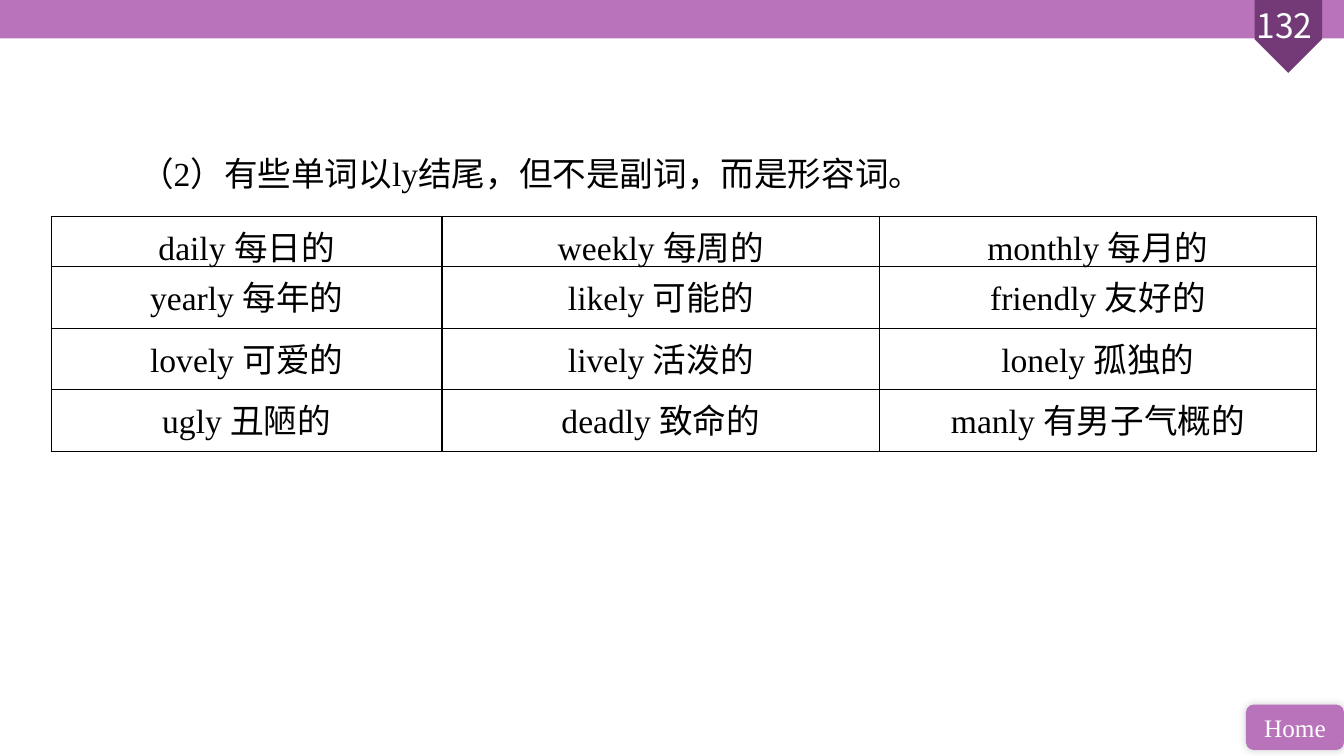
"""Build a slide listing adjectives that end in ly."""
from dataclasses import dataclass
from lxml import etree
from pptx import Presentation
from pptx.dml.color import RGBColor
from pptx.enum import shapes, text
from pptx.oxml import ns
from pptx.util import Pt

RULE = "（2）有些单词以ly结尾，但不是副词，而是形容词。"
WORDS = [
    ("daily 每日的", "weekly 每周的", "monthly 每月的"),
    ("yearly 每年的", "likely 可能的", "friendly 友好的"),
    ("lovely 可爱的", "lively 活泼的", "lonely 孤独的"),
    ("ugly 丑陋的", "deadly 致命的", "manly 有男子气概的"),
]
PAGE, HOME = "132 ", "Home"
COLS = (279.2, 312.5, 311.9)
ROWS = (35.7, 44, 44, 44)


@dataclass(frozen=True)
class Theme:
    """Colours, fonts and type sizes."""
    band: str = "B873BB"
    flag: str = "743A78"
    ink: str = "000000"
    light: str = "FFFFFF"
    latin: str = "Times New Roman"
    asian: str = "Noto Sans CJK SC"
    body: int = 24
    small: int = 18


T = Theme()
SHAPE = shapes.MSO_SHAPE
ALIGN = text.PP_ALIGN


def add(parent, tag, **attrs):
    """Append a DrawingML element."""
    return etree.SubElement(parent, ns.qn(tag), attrs)


def write(frame, words, size, color, font=T.latin, align=ALIGN.CENTER):
    """Fill a text frame with one styled paragraph."""
    frame.text = words
    para = frame.paragraphs[0]
    para.alignment = align
    for run in para.runs:
        run.font.size = Pt(size)
        run.font.name = font
        run.font.color.rgb = RGBColor.from_string(color)
        add(run._r.get_or_add_rPr(), "a:ea", typeface=T.asian)
    return para


def block(slide, kind, box, color):
    """Add a plain filled shape."""
    shape = slide.shapes.add_shape(kind, *map(Pt, box))
    shape.shadow.inherit = False
    shape.fill.solid()
    shape.fill.fore_color.rgb = RGBColor.from_string(color)
    shape.line.fill.background()
    return shape


def header(slide, width):
    """Add the top band and the page flag."""
    block(slide, SHAPE.RECTANGLE, (0, 0, width, 27.4), T.band)
    flag = block(slide, SHAPE.PENTAGON, (894.2, 2, 52, 48.2), T.flag)
    flag.rotation = 90
    page = slide.shapes.add_textbox(Pt(885), 0, Pt(70.6), Pt(36))
    page.text_frame.word_wrap = True
    write(page.text_frame, PAGE, T.body, T.light, T.asian)


def button(slide):
    """Add the home button with its soft shadow."""
    home = block(slide, SHAPE.ROUNDED_RECTANGLE, (890, 503.3, 70, 32.4), T.band)
    home.text_frame.vertical_anchor = text.MSO_ANCHOR.MIDDLE
    write(home.text_frame, HOME, T.small, T.light)
    glow = add(home._element.spPr.find(ns.qn("a:effectLst")), "a:outerShdw",
               blurRad=str(Pt(6)), dist="0", dir=str(315 * 60000))
    add(add(glow, "a:srgbClr", val=T.ink), "a:alpha", val="20000")


def border(cell):
    """Draw a thin line on each side of a cell."""
    props = cell._tc.get_or_add_tcPr()
    for side in "LRTB":
        line = add(props, f"a:ln{side}", w=str(Pt(1)))
        add(add(line, "a:solidFill"), "a:srgbClr", val=T.ink)


def grid(slide):
    """Add the word table."""
    table = slide.shapes.add_table(
        len(ROWS), len(COLS), Pt(36.6), Pt(154.4),
        Pt(sum(COLS)), Pt(sum(ROWS))).table
    table.first_row = table.horz_banding = False
    for col, width in zip(table.columns, COLS):
        col.width = Pt(width)
    for row, height, words in zip(table.rows, ROWS, WORDS):
        row.height = Pt(height)
        for cell, word in zip(row.cells, words):
            border(cell)
            cell.fill.background()
            write(cell.text_frame, word, T.body, T.ink)


def heading(slide):
    """Place the rule in the title."""
    title = slide.shapes.title
    title.left, title.top, title.width, title.height = map(
        Pt, (56.9, 100, 681.8, 41.8))
    frame = title.text_frame
    frame.auto_size = text.MSO_AUTO_SIZE.NONE
    frame.vertical_anchor = text.MSO_ANCHOR.TOP
    para = write(frame, RULE, T.body, T.ink, align=ALIGN.LEFT)
    para.line_spacing = 1.2
    para._p.get_or_add_pPr().set("indent", str(Pt(36)))


def main():
    """Assemble and save the slide."""
    deck = Presentation()
    deck.slide_width, deck.slide_height = Pt(960), Pt(540)
    slide = deck.slides.add_slide(deck.slide_layouts[5])
    header(slide, 960)
    button(slide)
    grid(slide)
    heading(slide)
    deck.save("out.pptx")


if __name__ == "__main__":
    main()
